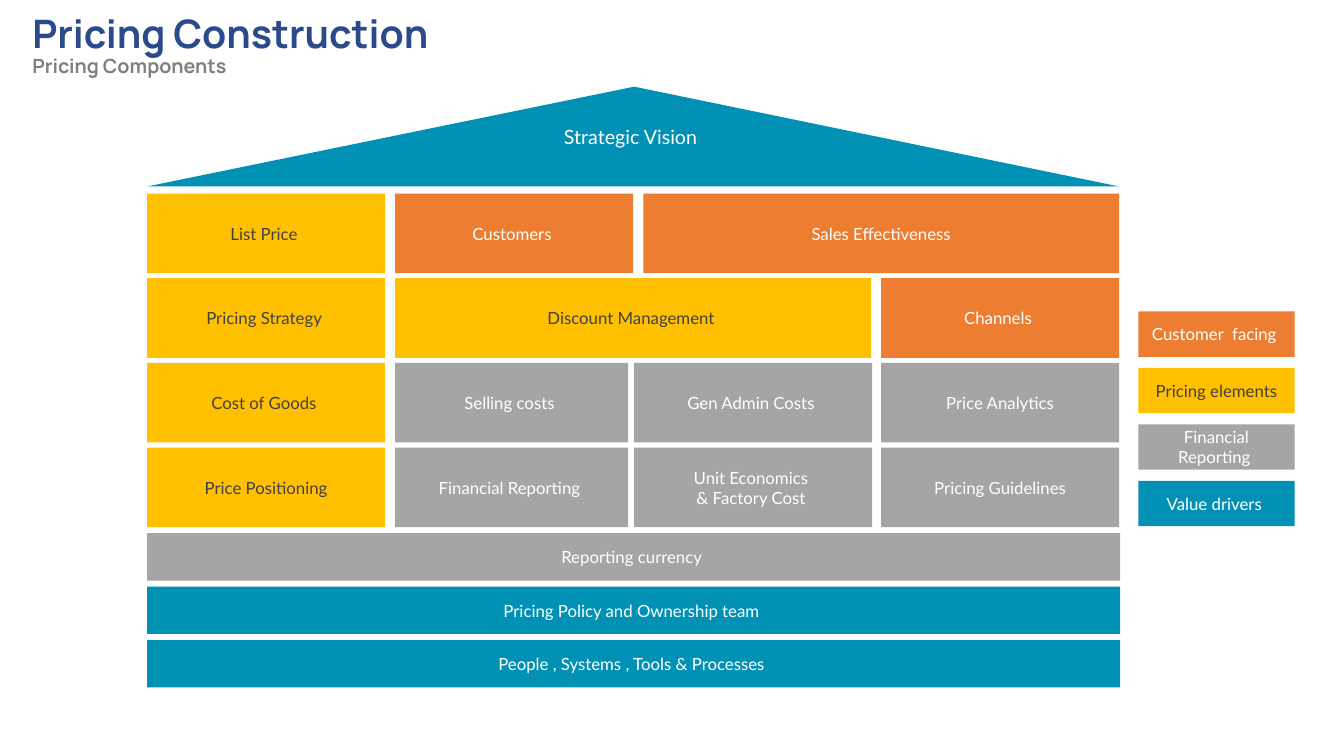
from pptx import Presentation
from pptx.dml.color import RGBColor
from pptx.enum.shapes import MSO_SHAPE
from pptx.enum.text import MSO_ANCHOR, MSO_AUTO_SIZE, PP_ALIGN
from pptx.util import Inches, Pt

RECT = MSO_SHAPE.RECTANGLE
MIDDLE = MSO_ANCHOR.MIDDLE
TOP = MSO_ANCHOR.TOP
FIXED = MSO_AUTO_SIZE.NONE
LEFT, CENTER = PP_ALIGN.LEFT, PP_ALIGN.CENTER

COLORS = {
    "orange": "ED7D31", "yellow": "FFC000", "gray": "A5A5A5",
    "teal": "0091B5", "white": "FFFFFF", "dark": "424142",
    "navy": "2A4A8B", "muted": "808080",
}


class Deck:
    """Style and current slide."""

    def __init__(self):
        self.prs = Presentation()
        self.prs.slide_width = Inches(13.33)
        self.prs.slide_height = Inches(7.5)
        self.slide = self.prs.slides.add_slide(self.prs.slide_layouts[5])

    def color(self, name):
        return RGBColor.from_string(COLORS[name])

    def style(self, para, font, size, color, align, bold=False):
        para.alignment = align
        para.font.name = font
        para.font.size = Pt(size)
        para.font.bold = bold
        para.font.color.rgb = self.color(color)

    def title(self, head, sub):
        shape = self.slide.shapes.title
        shape.left, shape.top = Inches(0.22), Inches(0.09)
        shape.width, shape.height = Inches(10.53), Inches(0.81)
        frame = shape.text_frame
        frame.text = f"{head}\n{sub}"
        frame.word_wrap = True
        frame.auto_size = FIXED
        frame.vertical_anchor = TOP
        looks = [(28, "navy"), (14, "muted")]
        for para, (size, color) in zip(frame.paragraphs, looks):
            self.style(para, "Manrope", size, color, LEFT, True)
            para.line_spacing = 0.9
            para.space_before = Pt(0)

    def fill(self, shape, text, color, size=12):
        shape.shadow.inherit = False
        shape.fill.solid()
        shape.fill.fore_color.rgb = self.color(color)
        shape.line.fill.background()
        frame = shape.text_frame
        frame.text = text
        frame.word_wrap = True
        frame.vertical_anchor = MIDDLE
        ink = "dark" if color == "yellow" else "white"
        for para in frame.paragraphs:
            self.style(para, "Lato", size, ink, CENTER)

    def box(self, x, y, w, h, text, color):
        shape = self.slide.shapes.add_shape(
            RECT, Inches(x), Inches(y), Inches(w), Inches(h))
        self.fill(shape, text, color)

    def roof(self, points, text, color):
        start, *rest = [(Inches(x), Inches(y)) for x, y in points]
        form = self.slide.shapes.build_freeform(*start)
        form.add_line_segments(rest, close=True)
        self.fill(form.convert_to_shape(), text, color, 14)


# Blocks of each floor: left, width, text, colour
FLOORS = [
    [(1.46, 2.36, "List Price ", "yellow"),
     (3.92, 2.36, "Customers ", "orange"),
     (6.38, 4.72, "Sales Effectiveness", "orange")],
    [(1.46, 2.36, "Pricing Strategy ", "yellow"),
     (3.92, 4.72, "Discount Management ", "yellow"),
     (8.74, 2.36, "Channels ", "orange")],
    [(1.46, 2.36, "Cost of Goods ", "yellow"),
     (3.92, 2.31, "Selling costs ", "gray"),
     (6.29, 2.36, "Gen Admin Costs ", "gray"),
     (8.74, 2.36, "Price Analytics", "gray")],
    [(1.46, 2.36, "Price Positioning", "yellow"),
     (3.92, 2.31, "Financial Reporting ", "gray"),
     (6.29, 2.36, "Unit Economics \n& Factory Cost ", "gray"),
     (8.74, 2.36, "Pricing Guidelines", "gray")],
]
BASES = [
    ("Reporting currency ", "gray"),
    ("Pricing Policy and Ownership team ", "teal"),
    ("People , Systems , Tools & Processes ", "teal"),
]
LEGEND = [
    ("Customer  facing ", "orange"),
    ("Pricing elements", "yellow"),
    ("Financial Reporting ", "gray"),
    ("Value drivers ", "teal"),
]


def main():
    deck = Deck()
    deck.title("Pricing Construction", "Pricing Components")

    # House: roof, floors and base
    deck.roof([(6.29, 0.86), (11.1, 1.85), (1.46, 1.85)],
              "Strategic Vision ", "teal")
    for row, floor in enumerate(FLOORS):
        for x, w, text, color in floor:
            deck.box(x, 1.92 + 0.84 * row, w, 0.79, text, color)
    for row, (text, color) in enumerate(BASES):
        deck.box(1.46, 5.29 + 0.53 * row, 9.65, 0.47, text, color)

    # Legend
    for row, (text, color) in enumerate(LEGEND):
        deck.box(11.29, 3.09 + 0.56 * row, 1.55, 0.45, text, color)

    deck.prs.save("out.pptx")


if __name__ == "__main__":
    main()
